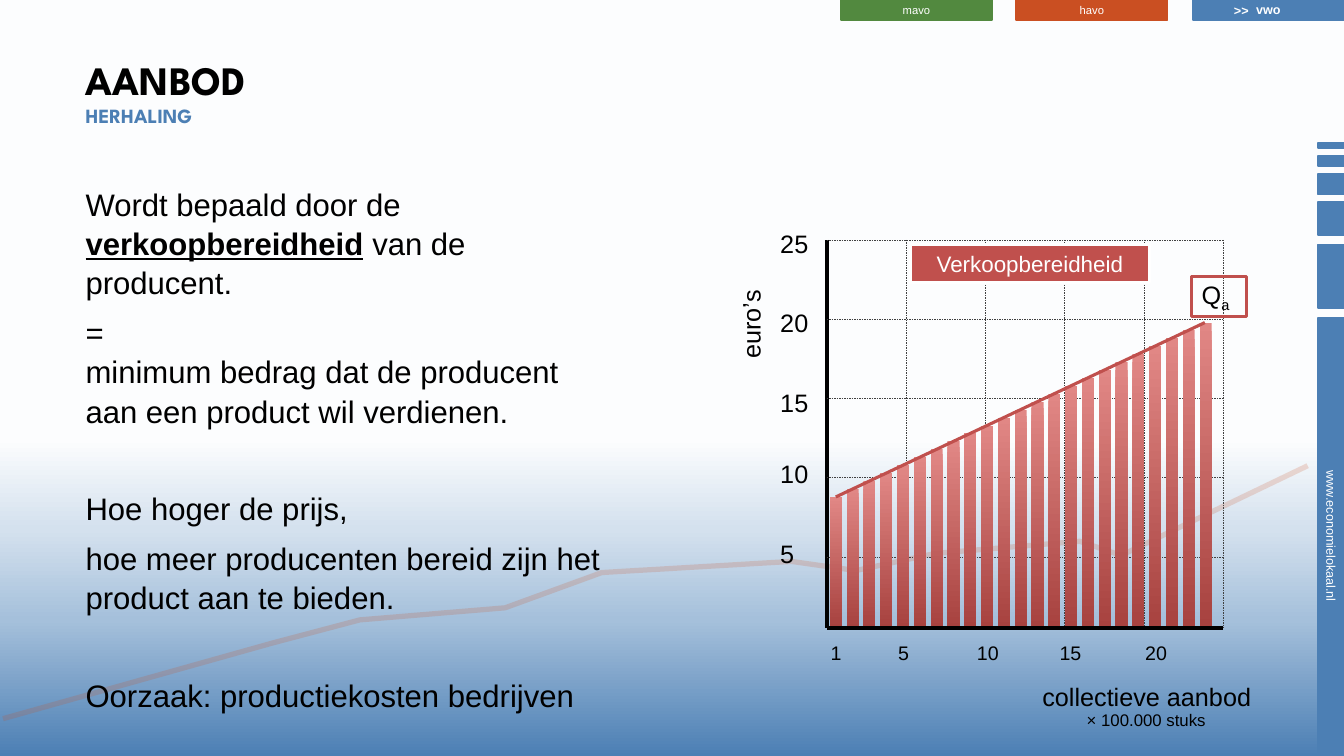
"""Build the slide about supply: willingness to sell, with a hand-drawn bar graph."""
import copy
from dataclasses import dataclass

import pptx
import pptx.dml.color
import pptx.enum.dml
import pptx.enum.shapes
import pptx.enum.text
import pptx.oxml
import pptx.oxml.ns
import pptx.util
from pptx.util import Inches

ALIGN = pptx.enum.text.PP_ALIGN
ANCHOR = pptx.enum.text.MSO_ANCHOR
DASH = pptx.enum.dml.MSO_LINE.DASH
qualify = pptx.oxml.ns.qn


@dataclass(frozen=True)
class Theme:
    font: str = "Arial"
    title_font: str = "League Spartan"
    black: str = "000000"
    white: str = "FFFFFF"
    blue: str = "4C7FB4"
    orange: str = "CA4F22"
    green: str = "52893F"
    red: str = "C0504D"
    grid: str = "404040"
    bar: tuple = ((0, "E18785"), (100, "A7423F"))
    sky: tuple = ((0, "4C7FB4"), (18, "A5C0DB"), (30, "D4E1EE"), (42, "FCFDFE"), (50, "FFFFFF"))
    title_size: float = 28.8
    subtitle_size: float = 14.4
    body_size: float = 22.2
    label_size: float = 18
    legend_size: float = 16
    tick_size: float = 14
    unit_size: float = 12
    mark_size: float = 9
    tab_size: float = 8


@dataclass(frozen=True)
class Tab:
    text: str
    left: float
    color: str
    size: float
    bold: bool = False


@dataclass(frozen=True)
class Strip:
    middle: float
    length: float
    text: str = ""


@dataclass(frozen=True)
class Label:
    text: str
    left: float
    top: float
    width: float
    height: float
    size: float
    rotation: float = 0
    wrap: bool = False
    color: str = "000000"
    bold: bool = False


THEME = Theme()
TABS = (
    Tab("vwo", 11.83, THEME.blue, THEME.mark_size, True),
    Tab("havo", 10.08, THEME.orange, THEME.tab_size),
    Tab("mavo", 8.34, THEME.green, THEME.tab_size),
)
STRIPS = (Strip(5.32, 4.33, "www.economielokaal.nl"), Strip(2.74, 0.63), Strip(2.17, 0.33),
          Strip(1.83, 0.2), Strip(1.6, 0.1), Strip(1.44, 0.05))
TREND = ((12.97, 4.62), (11.12, 5.51), (10.71, 5.37), (9.28, 5.49), (8.49, 5.66), (7.85, 5.57),
         (5.97, 5.68), (5.01, 6.03), (3.57, 6.15), (2.7, 6.38), (0.03, 7.13))
PRICES = (("25", 2.22), ("20", 3), ("15", 3.79), ("10", 4.5), ("5", 5.29))
QUANTITIES = (("1", 8.14), ("5", 8.81), ("10", 9.59), ("15", 10.41), ("20", 11.26))
LABELS = (
    Label(">>", 12.14, -0.02, 0.35, 0.25, THEME.mark_size, color=THEME.white, bold=True),
    Label("collectieve aanbod", 10.24, 6.71, 2.64, 0.4, THEME.label_size),
    Label("euro’s", 6.97, 2.98, 0.95, 0.4, THEME.label_size, rotation=270),
    *(Label(text, 7.64, top, 0.2 + 0.14 * len(text), 0.4, THEME.label_size) for text, top in PRICES),
    *(Label(text, left, 6.31, 0.2 + 0.11 * len(text), 0.34, THEME.tick_size) for text, left in QUANTITIES),
    Label("× 100.000 stuks", 10.68, 6.99, 1.38, 0.3, THEME.unit_size, wrap=True),
)
BODY = (
    (0, (("Wordt bepaald door de ", False), ("verkoopbereidheid", True), (" van de producent.", False))),
    (4.4, (("=\nminimum bedrag dat de producent aan een product wil verdienen.", False),)),
    (38.3, (("Hoe hoger de prijs,", False),)),
    (4.4, (("hoe meer producenten bereid zijn het product aan te bieden.", False),)),
    (38.3, (("Oorzaak: productiekosten bedrijven", False),)),
)
AXIS_LEFT, AXIS_RIGHT, AXIS_TOP, AXIS_BOTTOM = 8.2, 12.13, 2.38, 6.23
GRID_STEP = (AXIS_RIGHT - AXIS_LEFT) / 5
BAR_COUNT, BAR_WIDTH, FIRST_BAR, LOW_TOP, HIGH_TOP = 23, 0.12, 8.23, 4.93, 3.2


def rgb(color: str) -> pptx.dml.color.RGBColor:
    return pptx.dml.color.RGBColor.from_string(color)


def write(paragraph, text: str, *, size: float, color: str = THEME.black, font: str = THEME.font,
          bold: bool = False, underline: bool = False, baseline: int = 0) -> None:
    for index, line in enumerate(text.split("\n")):
        if index:
            paragraph.add_line_break()
            line_break = paragraph._p.findall(qualify("a:br"))[-1]
            line_break.append(copy.deepcopy(run.font._element))
        run = paragraph.add_run()
        run.text = line
        run.font.name, run.font.size = font, pptx.util.Pt(size)
        run.font.bold, run.font.underline = bold, underline
        run.font.color.rgb = rgb(color)
        if baseline:
            run.font._element.set("baseline", str(baseline * 1000))


def set_stops(fill, element, stops: tuple, angle: float) -> None:
    fill.gradient()
    fill.gradient_angle = angle
    stop_list = element.find(".//" + qualify("a:gsLst"))
    for stop in list(stop_list):
        stop_list.remove(stop)
    for position, color in stops:
        stop_list.append(pptx.oxml.parse_xml(
            f'<a:gs {pptx.oxml.ns.nsdecls("a")} pos="{position * 1000}"><a:srgbClr val="{color}"/></a:gs>'))


def add_box(slide, left: float, top: float, width: float, height: float, *, fill: str = "",
            line: str = "", weight: float = 1.25, rotation: float = 0):
    shape = slide.shapes.add_shape(pptx.enum.shapes.MSO_SHAPE.RECTANGLE, Inches(left), Inches(top),
                                   Inches(width), Inches(height))
    shape.shadow.inherit = False
    shape.rotation = rotation
    if fill:
        shape.fill.solid()
        shape.fill.fore_color.rgb = rgb(fill)
    else:
        shape.fill.background()
    if line:
        shape.line.color.rgb = rgb(line)
        shape.line.width = pptx.util.Pt(weight)
    else:
        shape.line.fill.background()
    return shape


def add_band(slide, left: float, top: float, width: float, height: float, color: str, text: str,
             size: float, bold: bool = False, rotation: float = 0) -> None:
    band = add_box(slide, left, top, width, height, fill=color, line=color, rotation=rotation)
    if text:
        frame = band.text_frame
        frame.margin_top, frame.margin_bottom = 0, Inches(0.01)
        frame.paragraphs[0].alignment = ALIGN.CENTER
        write(frame.paragraphs[0], text, size=size, color=THEME.white, bold=bold)


def add_line(slide, start: tuple, end: tuple, color: str, weight: float, dash=None) -> None:
    line = slide.shapes.add_connector(pptx.enum.shapes.MSO_CONNECTOR.STRAIGHT,
                                      *(Inches(value) for value in (*start, *end)))
    line.line.color.rgb = rgb(color)
    line.line.width = pptx.util.Pt(weight)
    line.line.dash_style = dash
    line.element.spPr.append(pptx.oxml.parse_xml(f'<a:effectLst {pptx.oxml.ns.nsdecls("a")}/>'))


def add_label(slide, label: Label) -> None:
    box = slide.shapes.add_textbox(Inches(label.left), Inches(label.top), Inches(label.width), Inches(label.height))
    box.rotation = label.rotation
    box.text_frame.word_wrap = label.wrap
    box.text_frame.auto_size = pptx.enum.text.MSO_AUTO_SIZE.SHAPE_TO_FIT_TEXT
    write(box.text_frame.paragraphs[0], label.text, size=label.size, color=label.color, bold=label.bold)


def add_frame(slide) -> None:
    for strip in STRIPS:
        add_band(slide, 13.2 - strip.length / 2, strip.middle - 0.13, strip.length, 0.26, THEME.blue,
                 strip.text, THEME.mark_size, rotation=90)
    for tab in TABS:
        add_band(slide, tab.left, 0, 1.5, 0.2, tab.color, tab.text, tab.size, tab.bold)
    points = [(Inches(x), Inches(y)) for x, y in TREND]
    builder = slide.shapes.build_freeform(*points[0], scale=1.0)
    builder.add_line_segments(points[1:], close=False)
    trend = builder.convert_to_shape()
    trend.shadow.inherit = False
    trend.fill.background()
    trend.line.color.rgb = rgb(THEME.orange)
    trend.line.width = pptx.util.Pt(3.75)
    color = trend.element.spPr.find(".//" + qualify("a:ln")).find(".//" + qualify("a:srgbClr"))
    color.append(pptx.oxml.parse_xml(f'<a:alpha {pptx.oxml.ns.nsdecls("a")} val="19000"/>'))


def add_words(slide) -> None:
    title = slide.shapes.title
    title.left, title.top, title.width, title.height = (Inches(value) for value in (0.75, 0.5, 10.02, 0.89))
    title.text_frame.vertical_anchor = ANCHOR.TOP
    heading = title.text_frame.paragraphs[0]
    heading.alignment = ALIGN.LEFT
    write(heading, "AANBOD\n", size=THEME.title_size, font=THEME.title_font, bold=True)
    write(heading, "HERHALING", size=THEME.subtitle_size, color=THEME.blue, font=THEME.title_font, bold=True)
    frame = slide.shapes.add_textbox(Inches(0.75), Inches(1.77), Inches(5.4), Inches(5.15)).text_frame
    frame.word_wrap = True
    for index, (space, runs) in enumerate(BODY):
        paragraph = frame.add_paragraph() if index else frame.paragraphs[0]
        paragraph.line_spacing = 1.05
        paragraph.space_after = pptx.util.Pt(3.4)
        if space:
            paragraph.space_before = pptx.util.Pt(space)
        for text, strong in runs:
            write(paragraph, text, size=THEME.body_size, bold=strong, underline=strong)


def add_graph(slide) -> None:
    add_line(slide, (AXIS_LEFT, AXIS_TOP), (AXIS_LEFT, AXIS_BOTTOM), THEME.black, 3)
    for index in range(5):
        y, x = AXIS_TOP + index * GRID_STEP, AXIS_LEFT + (index + 1) * GRID_STEP
        add_line(slide, (AXIS_LEFT, y), (AXIS_RIGHT, y), THEME.grid, 0.25, DASH)
        add_line(slide, (x, AXIS_TOP), (x, AXIS_BOTTOM), THEME.grid, 0.25, DASH)
    for index in range(BAR_COUNT):
        top = LOW_TOP - index * (LOW_TOP - HIGH_TOP) / (BAR_COUNT - 1)
        bar = add_box(slide, FIRST_BAR + index / 6, top, BAR_WIDTH, AXIS_BOTTOM - top)
        set_stops(bar.fill, bar.element, THEME.bar, 270)
    legend = add_box(slide, 9.03, 2.43, 2.37, 0.37, fill=THEME.red, line=THEME.white, weight=2.25)
    legend.text_frame.paragraphs[0].alignment = ALIGN.CENTER
    write(legend.text_frame.paragraphs[0], "Verkoopbereidheid", size=THEME.legend_size, color=THEME.white)
    add_line(slide, (AXIS_RIGHT, AXIS_BOTTOM), (AXIS_LEFT, AXIS_BOTTOM), THEME.black, 3)
    add_line(slide, (11.95, HIGH_TOP), (8.29, LOW_TOP), THEME.red, 2.25)
    supply = add_box(slide, 11.82, 2.74, 0.54, 0.4, line=THEME.red, weight=2.25)
    supply.text_frame.word_wrap = False
    supply.text_frame.paragraphs[0].alignment = ALIGN.LEFT
    write(supply.text_frame.paragraphs[0], "Q", size=THEME.label_size)
    write(supply.text_frame.paragraphs[0], "a", size=THEME.label_size, baseline=-25)


def main() -> None:
    presentation = pptx.Presentation()
    presentation.slide_width, presentation.slide_height = Inches(13.33), Inches(7.5)
    slide = presentation.slides.add_slide(presentation.slide_layouts[5])
    set_stops(slide.background.fill, slide.element, THEME.sky, 90)
    add_frame(slide)
    add_words(slide)
    add_graph(slide)
    for label in LABELS:
        add_label(slide, label)
    presentation.save("out.pptx")


if __name__ == "__main__":
    main()
